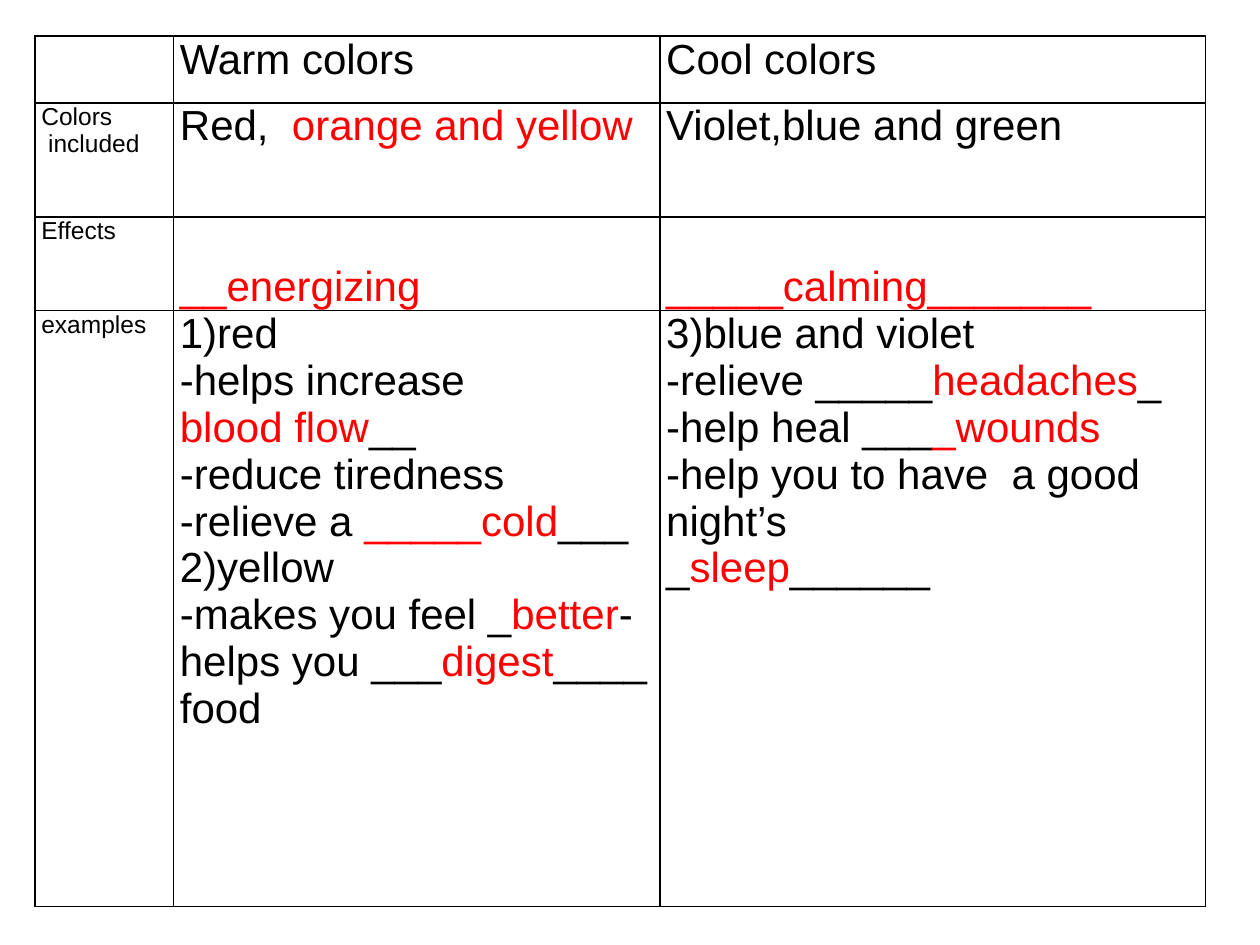
from lxml.etree import SubElement
from pptx import Presentation
from pptx.dml.color import RGBColor as RGB
from pptx.enum.text import MSO_ANCHOR as Anchor
from pptx.oxml.ns import qn
from pptx.util import Pt

COLORS = {"ink": "000000", "answer": "FF0000"}
FONT = "Arial"
LABEL_SIZE, BODY_SIZE = 14, 24
COLUMN_WIDTHS = [79.2, 277.9, 311.8]
ROW_HEIGHTS = [38.2, 65.2, 53.6, 340.5]
EFFECTS_ROW = 2
ROWS = [
    [[], ["Warm colors"], ["Cool colors"]],
    [["Colors", " included"], ["Red,  *orange and yellow*"], ["Violet,blue and green"]],
    [["Effects"], ["*__energizing*"], ["*_____calming_______*"]],
    [
        ["examples"],
        [
            "1)red",
            "-helps increase",
            "*blood flow*__",
            "-reduce tiredness",
            "-relieve a *_____cold*___",
            "2)yellow",
            "-makes you feel _*better*-helps you ___*digest*____ food",
        ],
        [
            "3)blue and violet",
            "-relieve _____*headaches*_",
            "-help heal ___*_wounds*",
            "-help you to have  a good night’s",
            "_*sleep*______",
        ],
    ],
]


def write_line(paragraph, line, size):
    """Write a line, colouring the parts between asterisks as answers."""
    paragraph.font.name = FONT
    paragraph.font.size = Pt(size)
    for index, part in enumerate(line.split("*")):
        if part:
            run = paragraph.add_run()
            run.text = part
            run.font.color.rgb = RGB.from_string(COLORS["answer" if index % 2 else "ink"])


def add_borders(cell):
    """Draw a thin line on all four sides of a cell."""
    properties = cell._tc.get_or_add_tcPr()
    for side in ("lnL", "lnR", "lnT", "lnB"):
        border = SubElement(properties, qn(f"a:{side}"), w=str(Pt(1)))
        fill = SubElement(border, qn("a:solidFill"))
        SubElement(fill, qn("a:srgbClr"), val=COLORS["ink"])


def fill_cell(cell, lines, size, anchor):
    """Format a cell and write its lines."""
    cell.margin_left = cell.margin_right = Pt(3.6)
    cell.margin_top = cell.margin_bottom = Pt(0)
    cell.vertical_anchor = anchor
    add_borders(cell)
    cell.fill.background()
    frame = cell.text_frame
    for index, line in enumerate(lines):
        write_line(frame.add_paragraph() if index else frame.paragraphs[0], line, size)


def add_color_table(slide):
    """Add the table that compares warm and cool colors."""
    table = slide.shapes.add_table(
        len(ROWS), len(COLUMN_WIDTHS), Pt(20), Pt(20.6),
        Pt(sum(COLUMN_WIDTHS)), Pt(sum(ROW_HEIGHTS)),
    ).table
    table.first_row = table.horz_banding = False
    for column, width in zip(table.columns, COLUMN_WIDTHS):
        column.width = Pt(width)
    for row, height in zip(table.rows, ROW_HEIGHTS):
        row.height = Pt(height)
    for r, row_texts in enumerate(ROWS):
        for c, lines in enumerate(row_texts):
            size = BODY_SIZE if c else LABEL_SIZE
            anchor = Anchor.BOTTOM if c and r == EFFECTS_ROW else Anchor.TOP
            fill_cell(table.cell(r, c), lines, size, anchor)


def main():
    """Build and save the slide."""
    deck = Presentation()
    deck.slide_width, deck.slide_height = Pt(720), Pt(540)
    add_color_table(deck.slides.add_slide(deck.slide_layouts[6]))
    deck.save("out.pptx")


if __name__ == "__main__":
    main()
